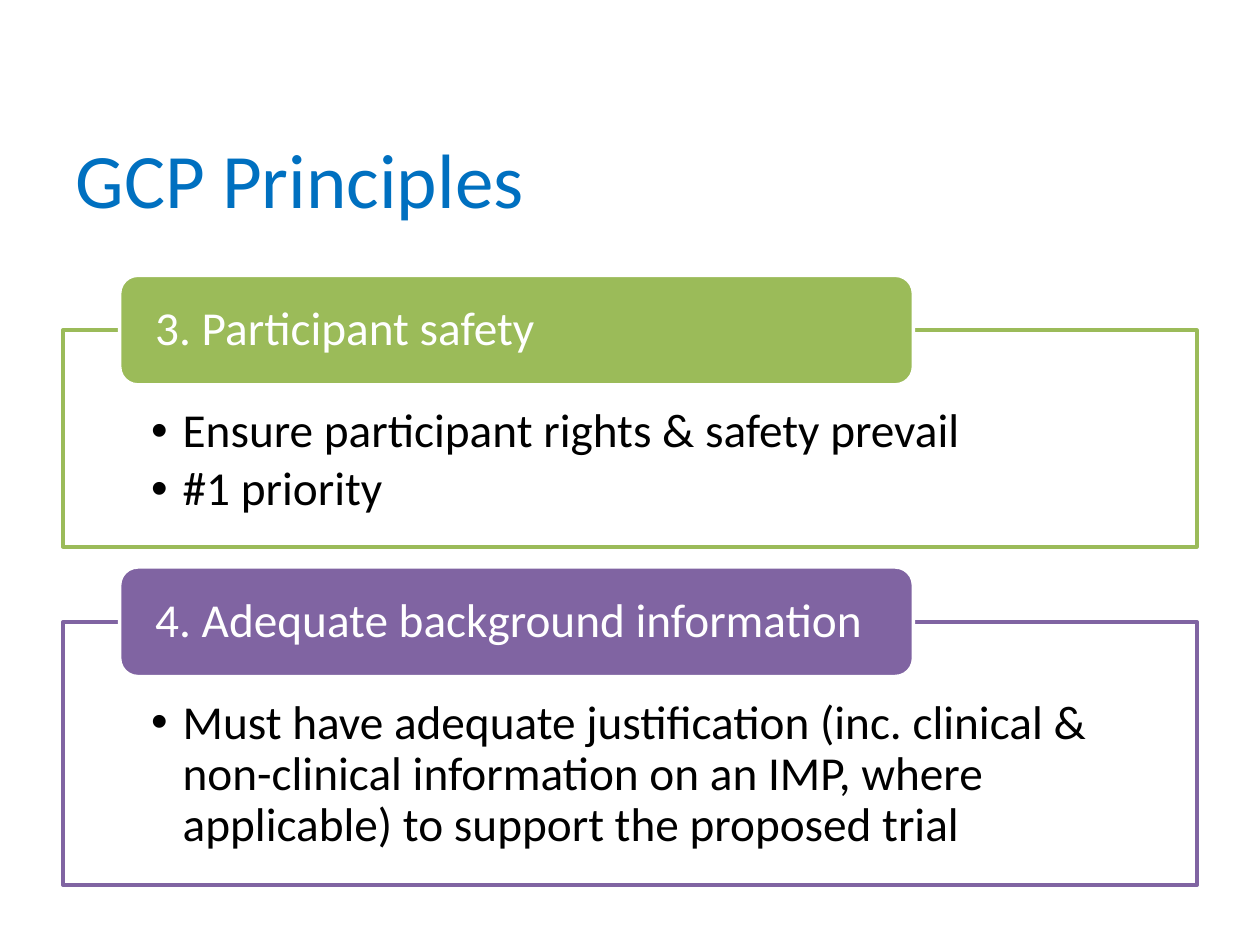
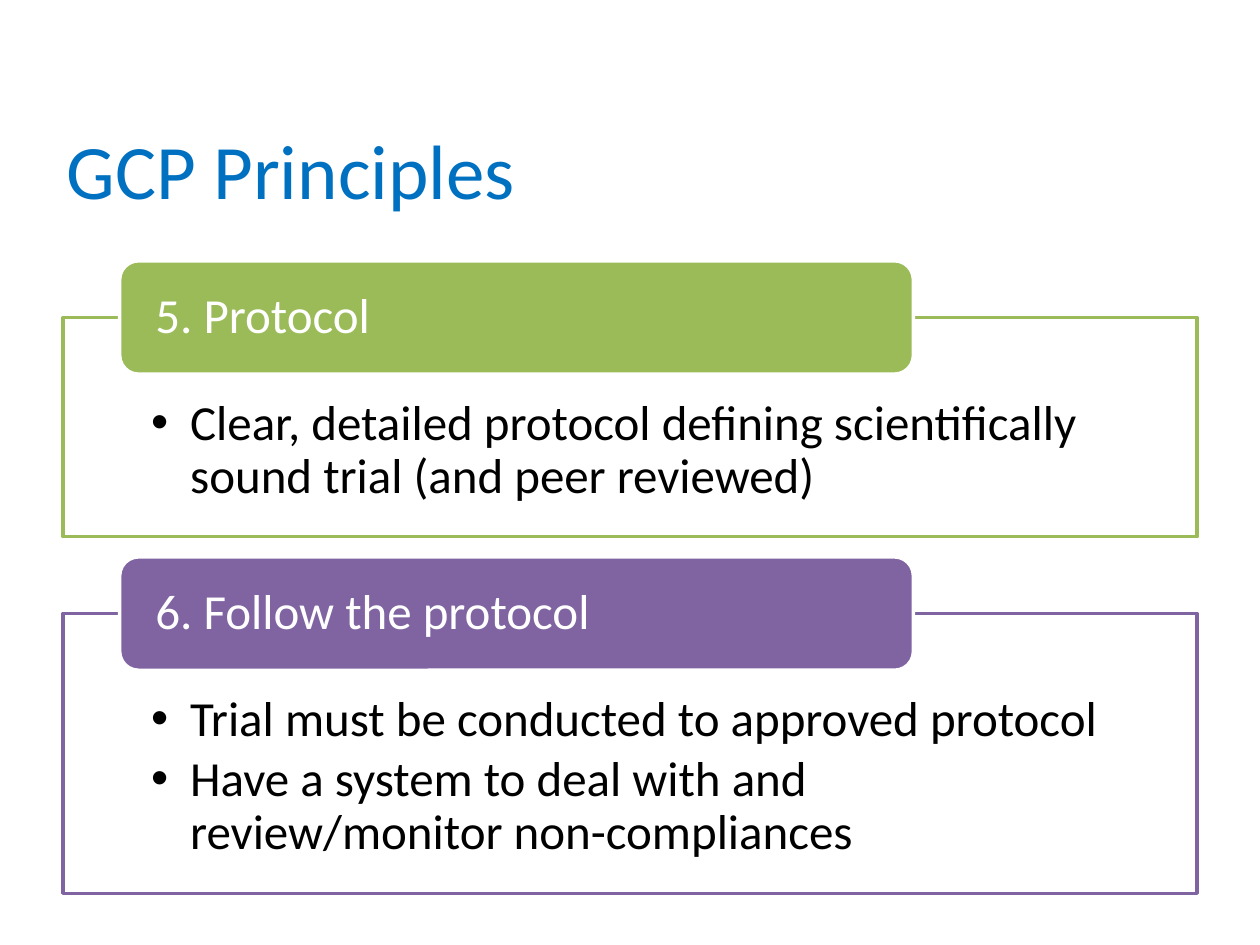
from lxml import etree
from pptx import Presentation
from pptx.dml.color import RGBColor
from pptx.enum.shapes import MSO_SHAPE
from pptx.enum.text import MSO_ANCHOR, MSO_AUTO_SIZE, PP_ALIGN
from pptx.oxml.ns import qn
from pptx.util import Inches, Pt

GREEN, PURPLE, BLUE = "9BBB59", "8064A2", "0070C0"
WHITE, BLACK = "FFFFFF", "000000"
FONT = "Calibri"
TITLE = "GCP Principles"

SLIDES = [
    {
        "title_at": (0.5, 0.99), "top": 2.62, "header_height": 0.87,
        "size": 27, "indent": 0.25, "inset_top": 0.61, "inset_bottom": 0.21,
        "principles": [
            ("3. Participant safety", GREEN, 1.72,
             ["Ensure participant rights & safety prevail", "#1 priority"]),
            ("4. Adequate background information", PURPLE, 2.09,
             ["Must have adequate justification (inc. clinical & non-clinical "
              "information on an IMP, where applicable) to support the proposed trial"]),
        ],
    },
    {
        "title_at": (0.43, 0.92), "top": 2.52, "header_height": 0.9,
        "size": 28, "indent": 0.31, "inset_top": 0.64, "inset_bottom": 0.22,
        "principles": [
            ("5. Protocol", GREEN, 1.74,
             ["Clear, detailed protocol defining scientifically sound trial "
              "(and peer reviewed)"]),
            ("6. Follow the protocol", PURPLE, 2.22,
             ["Trial must be conducted to approved protocol",
              "Have a system to deal with and review/monitor non-compliances"]),
        ],
    },
]

FRAME_LEFT, FRAME_WIDTH = 0.5, 9
HEADER_LEFT, HEADER_WIDTH = 0.95, 6.3
GAP = 0.16


def color(value):
    return RGBColor.from_string(value)


def style_font(paragraph, size, value):
    font = paragraph.font
    font.name, font.size = FONT, Pt(size)
    font.color.rgb = color(value)


def set_insets(text_frame, left, top, right, bottom):
    text_frame.margin_left, text_frame.margin_top = Inches(left), Inches(top)
    text_frame.margin_right, text_frame.margin_bottom = Inches(right), Inches(bottom)


def add_bullet(paragraph, indent):
    properties = paragraph._p.get_or_add_pPr()
    properties.set("marL", str(Inches(indent)))
    properties.set("indent", str(-Inches(indent)))
    etree.SubElement(properties, qn("a:buFont")).set("typeface", "Arial")
    etree.SubElement(properties, qn("a:buChar")).set("char", "•")


def add_title(slide, left, top):
    title = slide.shapes.title
    title.left, title.top = Inches(left), Inches(top)
    title.width, title.height = Inches(9), Inches(1.25)
    text_frame = title.text_frame
    text_frame.text = TITLE
    text_frame.auto_size = MSO_AUTO_SIZE.NONE
    text_frame.vertical_anchor = MSO_ANCHOR.TOP
    paragraph = text_frame.paragraphs[0]
    paragraph.alignment = PP_ALIGN.LEFT
    style_font(paragraph, 44, BLUE)


def add_box(slide, kind, at, fill, line, lines, size, text_color, anchor):
    shape = slide.shapes.add_shape(kind, *[Inches(length) for length in at])
    shape.shadow.inherit = False
    shape.fill.solid()
    shape.fill.fore_color.rgb = color(fill)
    shape.line.color.rgb = color(line)
    shape.line.width = Pt(2)
    text_frame = shape.text_frame
    text_frame.text = "\n".join(lines)
    text_frame.word_wrap = True
    text_frame.vertical_anchor = anchor
    for paragraph in text_frame.paragraphs:
        paragraph.alignment = PP_ALIGN.LEFT
        paragraph.line_spacing = 0.9
        style_font(paragraph, size, text_color)
    return text_frame


def add_principle(slide, content, top, header, accent, height, points):
    size, header_height = content["size"], content["header_height"]
    body = add_box(slide, MSO_SHAPE.RECTANGLE, (FRAME_LEFT, top, FRAME_WIDTH, height),
                   WHITE, accent, points, size, BLACK, MSO_ANCHOR.TOP)
    set_insets(body, 0.7, content["inset_top"], 0.7, content["inset_bottom"])
    for paragraph in body.paragraphs:
        paragraph.space_after = Pt(round(size * 0.15))
        add_bullet(paragraph, content["indent"])
    label = add_box(slide, MSO_SHAPE.ROUNDED_RECTANGLE,
                    (HEADER_LEFT, top - header_height / 2, HEADER_WIDTH, header_height),
                    accent, WHITE, [header], size, WHITE, MSO_ANCHOR.MIDDLE)
    set_insets(label, 0.24, 0, 0.24, 0)


def main():
    presentation = Presentation()
    presentation.slide_width, presentation.slide_height = Inches(10), Inches(7.5)
    for content in SLIDES:
        slide = presentation.slides.add_slide(presentation.slide_layouts[5])
        add_title(slide, *content["title_at"])
        top = content["top"]
        for header, accent, height, points in content["principles"]:
            add_principle(slide, content, top, header, accent, height, points)
            top += height + GAP + content["header_height"] / 2
    presentation.save("out.pptx")


if __name__ == "__main__":
    main()
